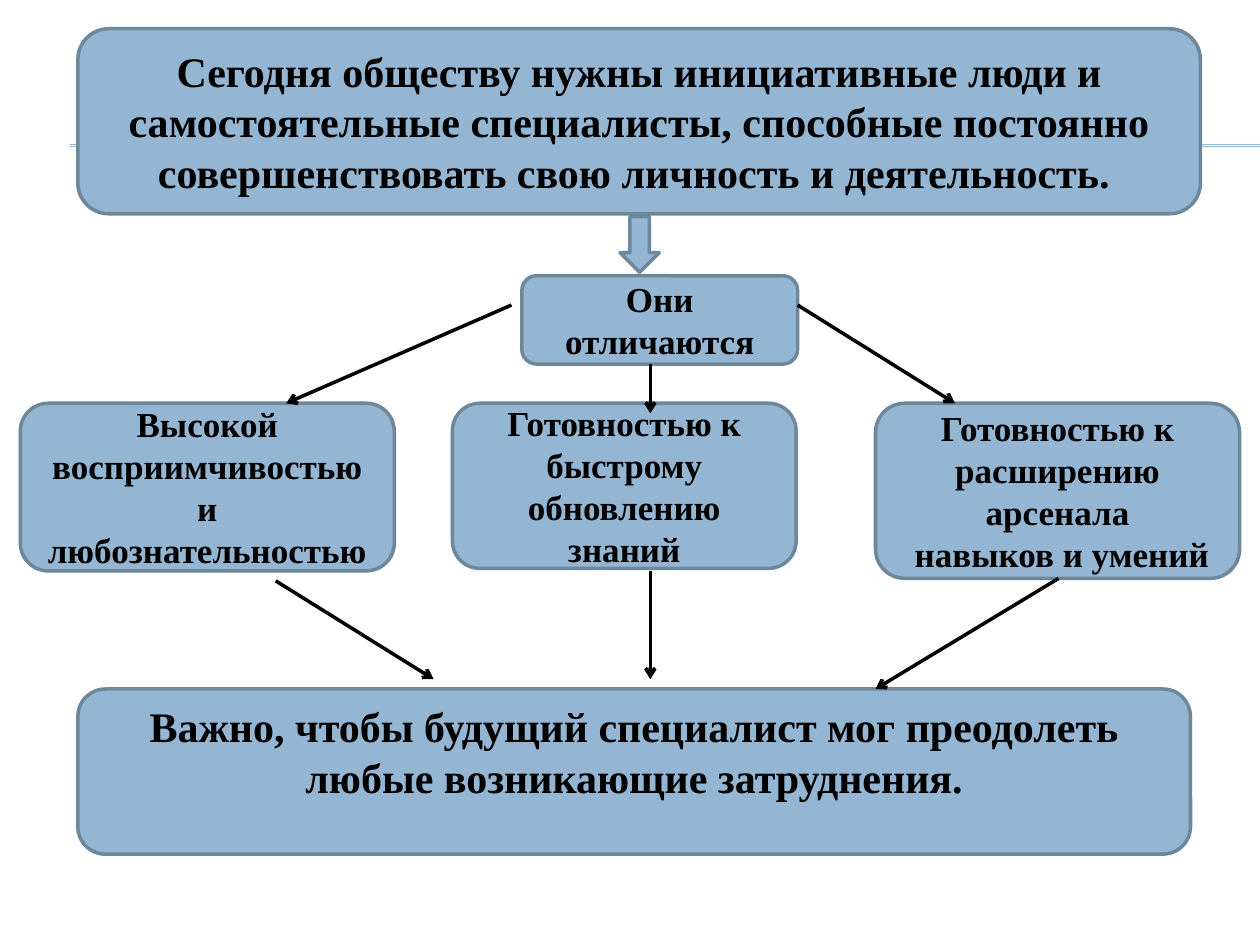
from dataclasses import dataclass

import lxml.etree
import pptx
import pptx.dml.color
import pptx.enum.shapes
import pptx.enum.text
import pptx.oxml.ns
import pptx.util
from pptx.util import Cm

BLUE, OUTLINE, BLACK = "94B6D2", "6D879B", "000000"
FONT = "Times New Roman"
ROW_TOP = 8.13
CENTRE_X = 13.11
SHAPES = pptx.enum.shapes.MSO_SHAPE


@dataclass
class Box:
    """A statement box; lengths in centimetres, size in points."""
    left: float
    top: float
    width: float
    height: float
    paragraphs: tuple[str, ...] = ()
    size: int = 20
    bottom_inset: float = 0.13
    preset: SHAPES = SHAPES.ROUNDED_RECTANGLE


@dataclass
class Line:
    """A straight line from (x1, y1) to (x2, y2) in centimetres."""
    x1: float
    y1: float
    x2: float
    y2: float
    color: str = BLACK
    weight: float = 2
    arrow: bool = True


def rgb(value: str) -> pptx.dml.color.RGBColor:
    return pptx.dml.color.RGBColor.from_string(value)


def draw_box(slide, box: Box) -> None:
    shape = slide.shapes.add_shape(
        box.preset, Cm(box.left), Cm(box.top), Cm(box.width), Cm(box.height))
    shape.shadow.inherit = False
    shape.fill.solid()
    shape.fill.fore_color.rgb = rgb(BLUE)
    shape.line.color.rgb = rgb(OUTLINE)
    shape.line.width = pptx.util.Pt(2)

    frame = shape.text_frame
    frame.word_wrap = True
    frame.vertical_anchor = pptx.enum.text.MSO_ANCHOR.MIDDLE
    frame.margin_bottom = Cm(box.bottom_inset)
    for index, text in enumerate(box.paragraphs):
        paragraph = frame.add_paragraph() if index else frame.paragraphs[0]
        paragraph.alignment = pptx.enum.text.PP_ALIGN.CENTER
        run = paragraph.add_run()
        run.text = text
        run.font.name = FONT
        run.font.size = pptx.util.Pt(box.size)
        run.font.bold = True
        run.font.color.rgb = rgb(BLACK)


def draw_line(slide, line: Line) -> None:
    connector = slide.shapes.add_connector(
        pptx.enum.shapes.MSO_CONNECTOR.STRAIGHT,
        Cm(line.x1), Cm(line.y1), Cm(line.x2), Cm(line.y2))
    connector.line.color.rgb = rgb(line.color)
    connector.line.width = pptx.util.Pt(line.weight)
    properties = connector._element.spPr
    if line.arrow:
        outline = properties.find(pptx.oxml.ns.qn("a:ln"))
        lxml.etree.SubElement(outline, pptx.oxml.ns.qn("a:tailEnd"), type="arrow")
    lxml.etree.SubElement(properties, pptx.oxml.ns.qn("a:effectLst"))


RULES = [Line(1.42, y, 25.4, y, BLUE, 0.75, arrow=False) for y in (2.92, 2.95)]

BOXES = [
    # Opening statement and the arrow below it
    Box(1.57, 0.58, 22.63, 3.73,
        ("Сегодня обществу нужны инициативные люди и самостоятельные "
         "специалисты, способные постоянно совершенствовать свою личность "
         "и деятельность. ",), size=24),
    Box(12.5, 4.37, 0.79, 1.12, preset=SHAPES.DOWN_ARROW),
    # Heading of the qualities
    Box(10.52, 5.56, 5.56, 1.78, ("Они отличаются",)),
    # Three qualities
    Box(0.41, ROW_TOP, 7.54, 3.38,
        ("Высокой восприимчивостью и любознательностью",)),
    Box(9.12, ROW_TOP, 6.93, 3.33,
        ("Готовностью к быстрому обновлению знаний",)),
    Box(17.65, ROW_TOP, 7.34, 3.53,
        ("Готовностью к расширению арсенала", " навыков и умений")),
    # Conclusion, its text raised by a deeper bottom inset
    Box(1.57, 13.89, 22.43, 3.33,
        ("Важно, чтобы будущий специалист мог преодолеть любые "
         "возникающие затруднения.",), size=24, bottom_inset=0.94),
]

ARROWS = [
    # From the heading to the qualities
    Line(10.31, 6.15, 5.77, ROW_TOP),
    Line(CENTRE_X, 7.34, CENTRE_X, 8.33),
    Line(16.08, 6.15, 19.25, ROW_TOP),
    # From the qualities to the conclusion
    Line(5.56, 11.71, 8.74, 13.69),
    Line(CENTRE_X, 11.51, CENTRE_X, 13.69),
    Line(21.34, 11.66, 17.65, 13.89),
]


def main() -> None:
    deck = pptx.Presentation()
    deck.slide_width, deck.slide_height = Cm(25.4), Cm(19.05)
    slide = deck.slides.add_slide(deck.slide_layouts[6])
    for rule in RULES:
        draw_line(slide, rule)
    for box in BOXES:
        draw_box(slide, box)
    for arrow in ARROWS:
        draw_line(slide, arrow)
    deck.save("out.pptx")


if __name__ == "__main__":
    main()
